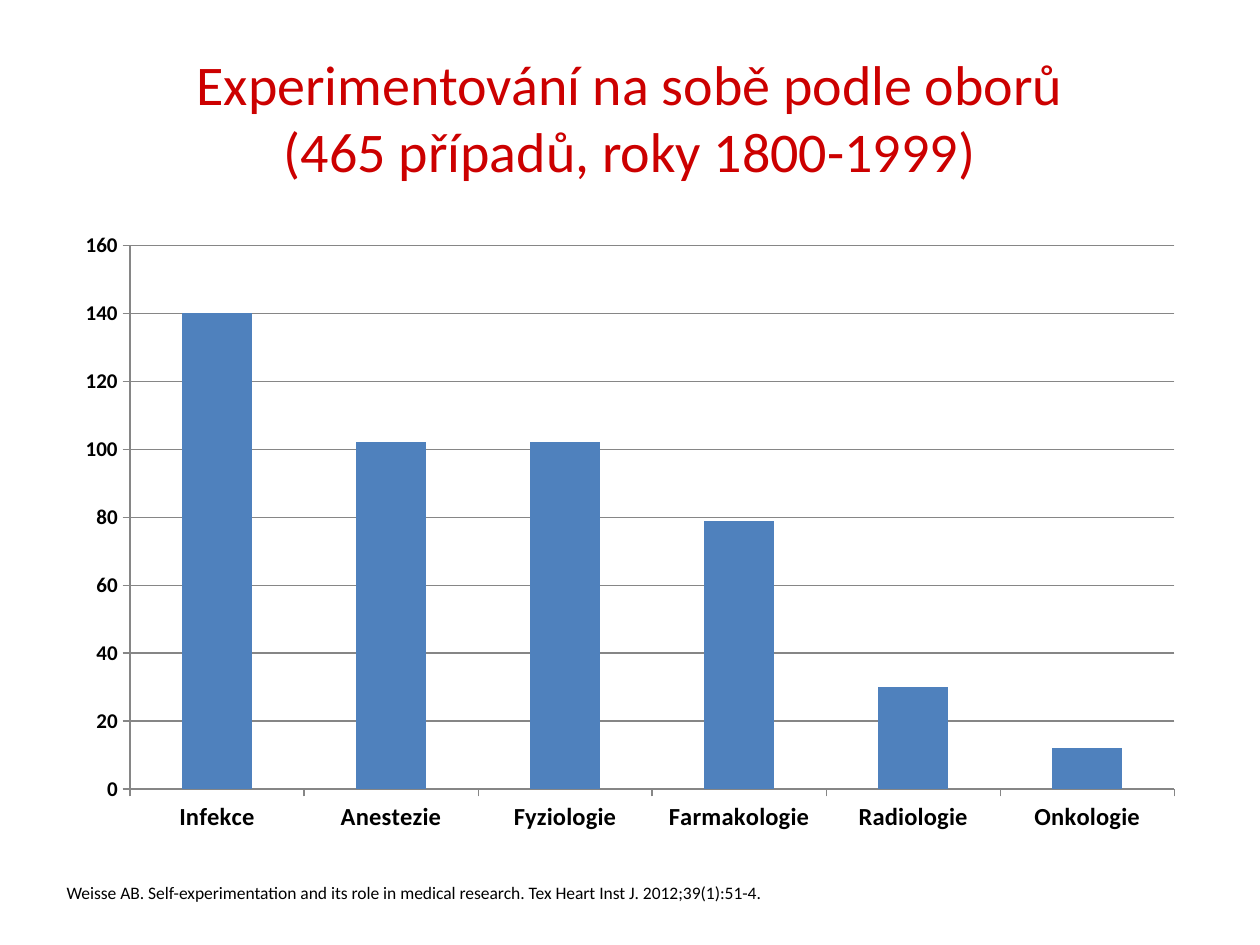
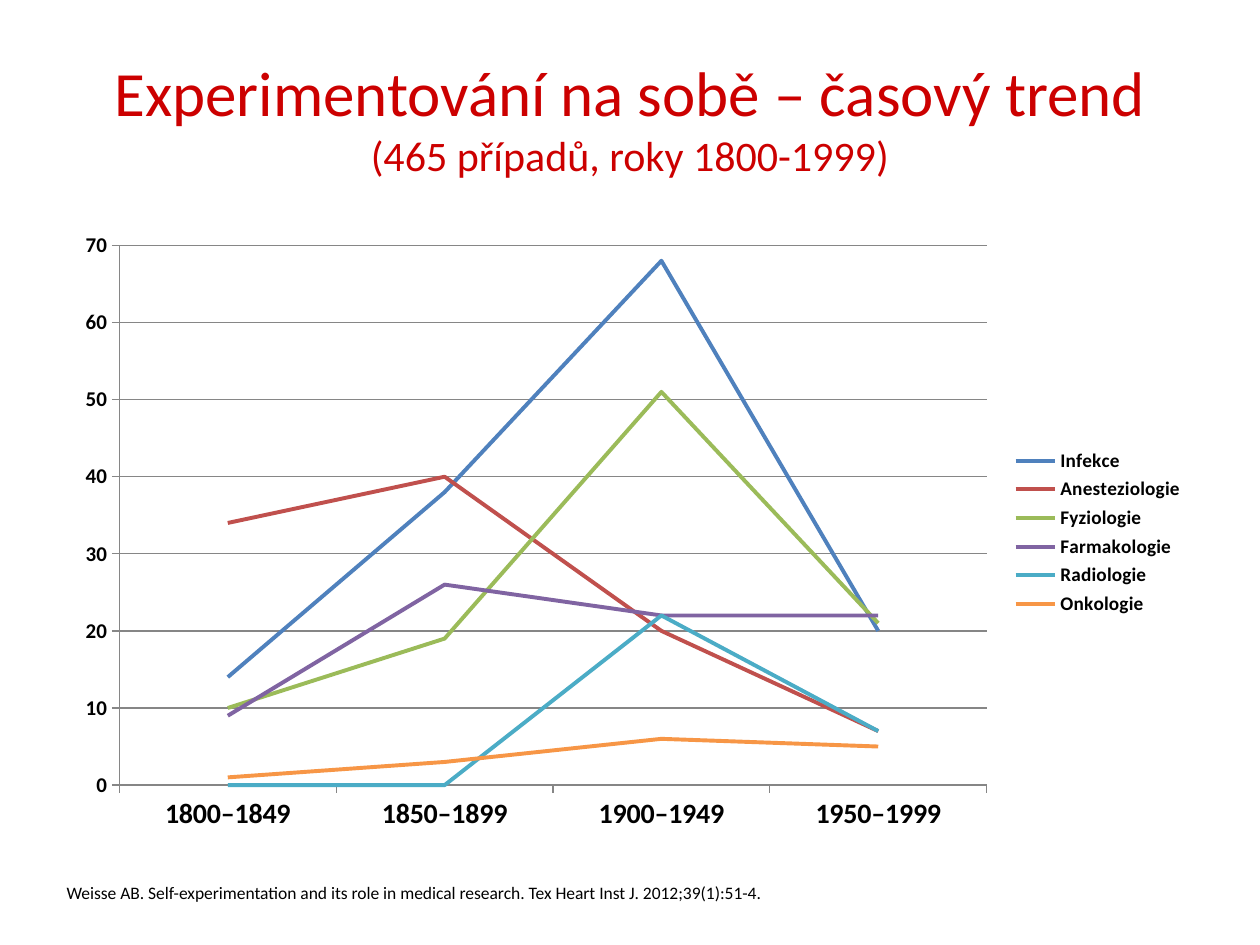
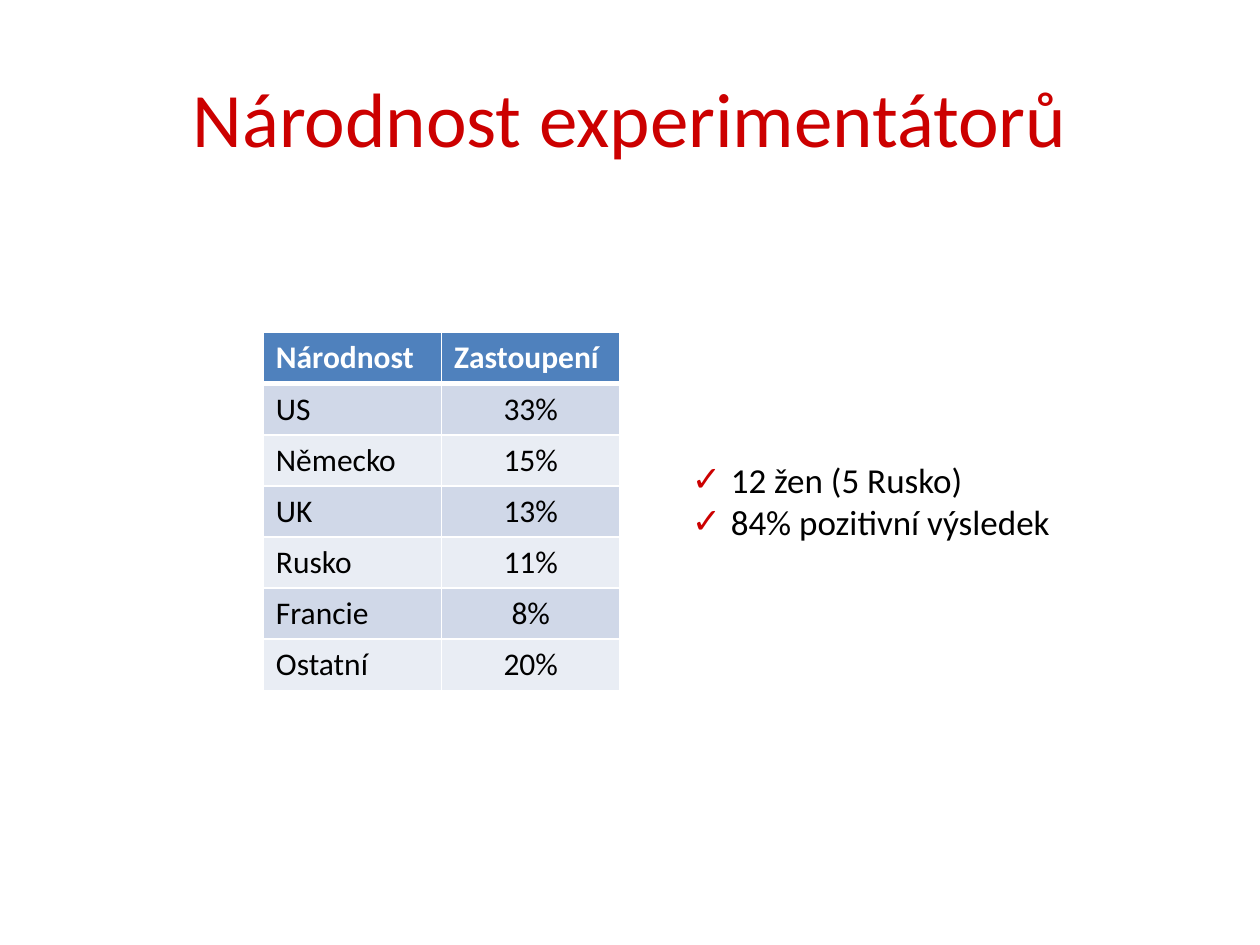
from lxml.etree import SubElement
from pptx import Presentation
from pptx.chart.data import CategoryChartData
from pptx.dml.color import RGBColor
from pptx.enum.chart import XL_CHART_TYPE, XL_LEGEND_POSITION, XL_TICK_MARK
from pptx.enum.text import MSO_ANCHOR, MSO_AUTO_SIZE, PP_ALIGN
from pptx.oxml.ns import qn
from pptx.util import Emu, Inches, Pt

FONT = "Calibri"
COLORS = {
    "title": "CC0000", "text": "000000", "white": "FFFFFF", "axis": "868686",
    "header": "4F81BD", "odd_row": "D0D8E8", "even_row": "E9EDF4",
}
SERIES_COLORS = ["4F81BD", "C0504D", "9BBB59", "8064A2", "4BACC6", "F79646"]
CITATION = ("Weisse AB. Self-experimentation and its role in medical research. "
            "Tex Heart Inst J. 2012;39(1):51-4.")
CASES = "(465 případů, roky 1800-1999)"

CHART_PAGES = [
    {
        "title": [("Experimentování na sobě podle oborů", 32), (CASES, 32)],
        "kind": XL_CHART_TYPE.COLUMN_CLUSTERED,
        "categories": ["Infekce", "Anestezie", "Fyziologie",
                       "Farmakologie", "Radiologie", "Onkologie"],
        "series": {"Series 1": [140, 102, 102, 79, 30, 12]},
        "category_size": 14, "maximum": 160, "step": 20,
    },
    {
        "title": [("Experimentování na sobě – časový trend", 36), (CASES, 24)],
        "kind": XL_CHART_TYPE.LINE,
        "categories": ["1800–1849", "1850–1899", "1900–1949", "1950–1999"],
        "series": {
            "Infekce": [14, 38, 68, 20],
            "Anesteziologie": [34, 40, 20, 7],
            "Fyziologie": [10, 19, 51, 21],
            "Farmakologie": [9, 26, 22, 22],
            "Radiologie": [0, 0, 22, 7],
            "Onkologie": [1, 3, 6, 5],
        },
        "category_size": 16, "maximum": 70, "step": 10,
    },
]

NATIONALITY_TITLE = [("Národnost experimentátorů", 44)]
NATIONALITIES = [
    ("Národnost", "Zastoupení"), ("US", "33%"), ("Německo", "15%"), ("UK", "13%"),
    ("Rusko", "11%"), ("Francie", "8%"), ("Ostatní", "20%"),
]
FINDINGS = ["12 žen (5 Rusko)", "84% pozitivní výsledek"]

TITLE_AREA = (0.5, 0.3, 9, 1.25)
CHART_AREA = (0.5, 1.75, 9, 4.95)
CITATION_AREA = (0.43, 6.95, 5.9, 0.27)
TABLE_AREA = (2.09, 2.64, 2.83, 2.84)
FINDINGS_AREA = (5.39, 3.59, 3.46, 0.77)


def color(name):
    return RGBColor.from_string(COLORS.get(name, name))


def area(lengths):
    return [Inches(length) for length in lengths]


def place(shape, lengths):
    shape.left, shape.top, shape.width, shape.height = area(lengths)


def style_font(font, size, fill="text", bold=False):
    font.name, font.size, font.bold = FONT, Pt(size), bold
    font.color.rgb = color(fill)


def write(para, text, size, fill="text", bold=False, align=PP_ALIGN.LEFT):
    para.alignment = align
    span = para.add_run()
    span.text = text
    style_font(span.font, size, fill, bold)


def add_page(deck, layout, title):
    page = deck.slides.add_slide(deck.slide_layouts.get_by_name(layout))
    place(page.shapes.title, TITLE_AREA)
    frame = page.shapes.title.text_frame
    frame.vertical_anchor = MSO_ANCHOR.MIDDLE
    para = frame.paragraphs[0]
    for number, (text, size) in enumerate(title):
        if number:
            para.add_line_break()
        write(para, text, size, fill="title", align=PP_ALIGN.CENTER)
    return page


def add_citation(page):
    frame = page.shapes.add_textbox(*area(CITATION_AREA)).text_frame
    frame.word_wrap = False
    frame.auto_size = MSO_AUTO_SIZE.SHAPE_TO_FIT_TEXT
    write(frame.paragraphs[0], CITATION, 10)


def style_axis(axis, size):
    axis.major_tick_mark = XL_TICK_MARK.OUTSIDE
    axis.minor_tick_mark = XL_TICK_MARK.NONE
    axis.format.line.color.rgb = color("axis")
    style_font(axis.tick_labels.font, size, bold=True)


def add_chart(page, content):
    data = CategoryChartData()
    data.categories = content["categories"]
    for name, values in content["series"].items():
        data.add_series(name, values)
    chart = page.shapes.add_chart(content["kind"], *area(CHART_AREA), data).chart
    style_font(chart.font, 10)
    chart.has_title = False
    style_axis(chart.category_axis, content["category_size"])
    values_axis = chart.value_axis
    style_axis(values_axis, 12)
    values_axis.minimum_scale = 0
    values_axis.maximum_scale = content["maximum"]
    values_axis.major_unit = content["step"]
    values_axis.has_major_gridlines = True
    values_axis.major_gridlines.format.line.color.rgb = color("axis")

    is_line = content["kind"] == XL_CHART_TYPE.LINE
    plot = chart.plots[0]
    plot.vary_by_categories = False
    if not is_line:
        plot.gap_width = 150
    for series, shade in zip(plot.series, SERIES_COLORS):
        if is_line:
            series.smooth = False
            series.format.line.width = Pt(2.25)
            series.format.line.color.rgb = color(shade)
        else:
            series.format.fill.solid()
            series.format.fill.fore_color.rgb = color(shade)
    chart.has_legend = is_line
    if is_line:
        chart.legend.position = XL_LEGEND_POSITION.RIGHT
        chart.legend.include_in_layout = False
        style_font(chart.legend.font, 11, bold=True)


def add_borders(cell, widths):
    properties = cell._tc.get_or_add_tcPr()
    for number, (side, width) in enumerate(widths.items()):
        line = properties.makeelement(qn(f"a:{side}"), {"w": str(Pt(width))})
        properties.insert(number, line)
        fill = SubElement(line, qn("a:solidFill"))
        SubElement(fill, qn("a:srgbClr"), val=COLORS["white"])


def add_nationalities(page):
    rows, columns = len(NATIONALITIES), len(NATIONALITIES[0])
    left, top, width, height = area(TABLE_AREA)
    table = page.shapes.add_table(rows, columns, left, top, width, height).table
    for column in table.columns:
        column.width = Emu(width // columns)
    for row_number, texts in enumerate(NATIONALITIES):
        header = row_number == 0
        row_fill = "header" if header else ("even_row", "odd_row")[row_number % 2]
        for column_number, text in enumerate(texts):
            cell = table.cell(row_number, column_number)
            cell.fill.solid()
            cell.fill.fore_color.rgb = color(row_fill)
            centred = column_number and not header
            write(cell.text_frame.paragraphs[0], text, 18,
                  fill="white" if header else "text", bold=header,
                  align=PP_ALIGN.CENTER if centred else PP_ALIGN.LEFT)
            add_borders(cell, {"lnL": 1, "lnR": 1,
                               "lnT": 3 if row_number == 1 else 1,
                               "lnB": 3 if header else 1})


def add_findings(page):
    box = page.placeholders[1]
    place(box, FINDINGS_AREA)
    frame = box.text_frame
    frame.word_wrap = True
    frame.auto_size = MSO_AUTO_SIZE.SHAPE_TO_FIT_TEXT
    for number, text in enumerate(FINDINGS):
        para = frame.add_paragraph() if number else frame.paragraphs[0]
        write(para, text, 20)
        para.space_before = Pt(0)
        properties = para._p.get_or_add_pPr()
        indent = Inches(0.31)
        properties.set("marL", str(indent))
        properties.set("indent", str(-indent))
        bullet_color = SubElement(properties, qn("a:buClr"))
        SubElement(bullet_color, qn("a:srgbClr"), val=COLORS["title"])
        SubElement(properties, qn("a:buChar"), char="✓")


def main():
    deck = Presentation()
    deck.slide_width, deck.slide_height = Inches(10), Inches(7.5)
    for content in CHART_PAGES:
        page = add_page(deck, "Title Only", content["title"])
        add_chart(page, content)
        add_citation(page)
    page = add_page(deck, "Title and Content", NATIONALITY_TITLE)
    add_nationalities(page)
    add_findings(page)
    deck.save("out.pptx")


if __name__ == "__main__":
    main()
